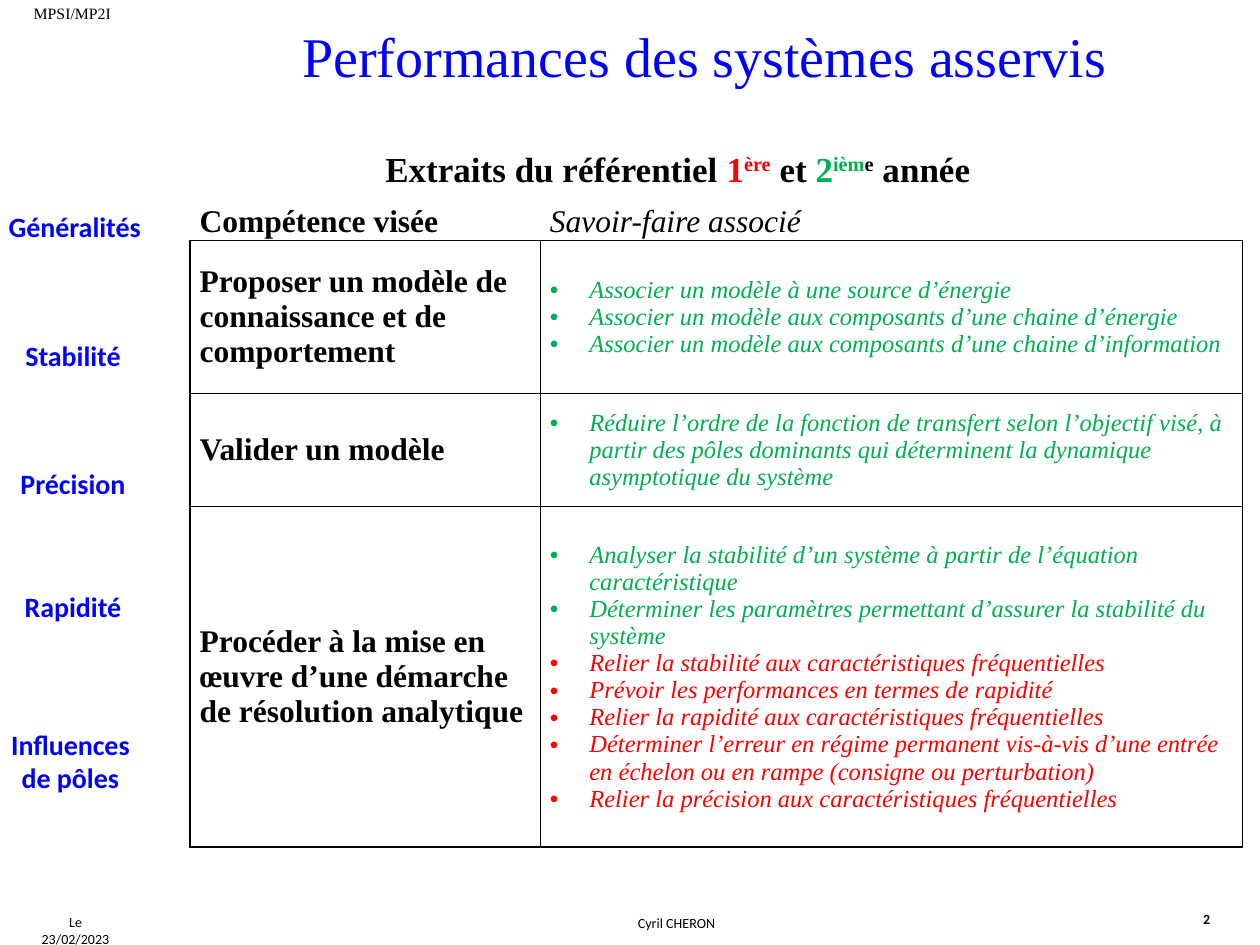
import pptx
import pptx.util
import pptx.dml.color
import pptx.enum.text
import pptx.oxml
import pptx.oxml.ns

Pt = pptx.util.Pt
RGBColor = pptx.dml.color.RGBColor
ALIGN = pptx.enum.text.PP_ALIGN
ANCHOR = pptx.enum.text.MSO_ANCHOR

BLACK = RGBColor(0x00, 0x00, 0x00)
WHITE = RGBColor(0xFF, 0xFF, 0xFF)
BLUE = RGBColor(0x00, 0x00, 0xFF)
RED = RGBColor(0xFF, 0x00, 0x00)
GREEN = RGBColor(0x00, 0xB0, 0x50)
SERIF = "Times New Roman"
SANS = "Calibri"

LABELS = [
    ("Généralités", 1, 116, 26.5),
    ("Stabilité", 0, 190, 26.5),
    ("Précision", 0, 263, 26.5),
    ("Rapidité", 0, 333.5, 26.5),
    ("Influences de pôles", -1.5, 412, 46),
]
HEADING = [
    ("Extraits du référentiel ", BLACK, False),
    ("1", RED, False),
    ("ère", RED, True),
    (" et ", BLACK, False),
    ("2", GREEN, False),
    ("ièm", GREEN, True),
    ("e", BLACK, True),
    (" année", BLACK, False),
]
SKILLS = [
    ("Proposer un modèle de connaissance et de comportement", 87.2, [
        ("Associer un modèle à une source d’énergie", GREEN),
        ("Associer un modèle aux composants d’une chaine d’énergie", GREEN),
        ("Associer un modèle aux composants d’une chaine d’information", GREEN),
    ]),
    ("Valider un modèle", 64.8, [
        ("Réduire l’ordre de la fonction de transfert selon l’objectif visé, à partir des pôles "
         "dominants qui déterminent la dynamique asymptotique du système", GREEN),
    ]),
    ("Procéder à la mise en œuvre d’une démarche de résolution analytique", 194.6, [
        ("Analyser la stabilité d’un système à partir de l’équation caractéristique", GREEN),
        ("Déterminer les paramètres permettant d’assurer la stabilité du système", GREEN),
        ("Relier la stabilité aux caractéristiques fréquentielles", RED),
        ("Prévoir les performances en termes de rapidité", RED),
        ("Relier la rapidité aux caractéristiques fréquentielles", RED),
        ("Déterminer l’erreur en régime permanent vis-à-vis d’une entrée en échelon ou en rampe "
         "(consigne ou perturbation)", RED),
        ("Relier la précision aux caractéristiques fréquentielles", RED),
    ]),
]


def write(p, text, size=18, font=SERIF, color=BLACK, bold=False, italic=False, raised=False):
    r = p.add_run()
    r.text = text
    r.font.size = Pt(size)
    r.font.name = font
    r.font.color.rgb = color
    r.font.bold = bold
    r.font.italic = italic
    if raised:
        r.font._element.set("baseline", "30000")


def place(sp, x, y, w, h):
    sp.left, sp.top, sp.width, sp.height = Pt(x), Pt(y), Pt(w), Pt(h)


def add_box(s, x, y, w, h, align=ALIGN.LEFT, wrap=True, side=7.2):
    tf = s.shapes.add_textbox(Pt(x), Pt(y), Pt(w), Pt(h)).text_frame
    tf.word_wrap = wrap
    tf.margin_left = tf.margin_right = Pt(side)
    tf.paragraphs[0].alignment = align
    return tf.paragraphs[0]


def add_title(s):
    sp = s.shapes.title
    place(sp, 156, 8.6, 493.5, 46)
    tf = sp.text_frame
    tf.word_wrap = False
    tf.auto_size = pptx.enum.text.MSO_AUTO_SIZE.NONE
    tf.vertical_anchor = ANCHOR.TOP
    p = tf.paragraphs[0]
    p.alignment = ALIGN.CENTER
    write(p, "Performances des systèmes asservis", size=32, color=BLUE)


def set_bullet(p):
    pPr = p._p.get_or_add_pPr()
    pPr.set("marL", str(Pt(22.5)))
    pPr.set("indent", str(Pt(-22.5)))
    ns = pptx.oxml.ns.nsdecls("a")
    pPr.append(pptx.oxml.parse_xml(f'<a:buFont {ns} typeface="Arial"/>'))
    pPr.append(pptx.oxml.parse_xml(f'<a:buChar {ns} char="•"/>'))


def set_borders(cell, **colors):
    ns = pptx.oxml.ns.nsdecls("a")
    tcPr = cell._tc.get_or_add_tcPr()
    for i, side in enumerate("LRTB"):
        color = colors.get(side, BLACK)
        tcPr.insert(i, pptx.oxml.parse_xml(
            f'<a:ln{side} {ns} w="{Pt(1)}"><a:solidFill><a:srgbClr val="{color}"/>'
            f'</a:solidFill></a:ln{side}>'))


def format_cell(cell, **borders):
    cell.fill.background()
    cell.vertical_anchor = ANCHOR.MIDDLE
    cell.margin_left = cell.margin_right = Pt(5.4)
    cell.margin_top = cell.margin_bottom = 0
    set_borders(cell, **borders)


def add_skill_table(s):
    heights = [21.6] + [height for _, height, _ in SKILLS]
    frame = s.shapes.add_table(len(heights), 2, Pt(108.7), Pt(115.9), Pt(601.2), Pt(sum(heights)))
    table = frame.table
    table.first_row = table.horz_banding = False
    for column, width in zip(table.columns, (200.2, 401)):
        column.width = Pt(width)
    for row, height in zip(table.rows, heights):
        row.height = Pt(height)
    headers = [("Compétence visée", {"bold": True}), ("Savoir-faire associé", {"italic": True})]
    for col, (text, style) in enumerate(headers):
        cell = table.cell(0, col)
        format_cell(cell, L=WHITE, T=WHITE, R=WHITE)
        write(cell.text_frame.paragraphs[0], text, **style)
    for row, (skill, _, abilities) in enumerate(SKILLS, 1):
        left, right = table.cell(row, 0), table.cell(row, 1)
        format_cell(left)
        format_cell(right)
        write(left.text_frame.paragraphs[0], skill, bold=True)
        tf = right.text_frame
        for i, (text, color) in enumerate(abilities):
            p = tf.add_paragraph() if i else tf.paragraphs[0]
            set_bullet(p)
            write(p, text, size=14, color=color, italic=True)


def main():
    prs = pptx.Presentation()
    prs.slide_width, prs.slide_height = Pt(720), Pt(540)
    s = prs.slides.add_slide(prs.slide_layouts[5])
    add_title(s)
    write(add_box(s, 12.2, -1.4, 62, 18), "MPSI/MP2I", size=9)
    write(add_box(s, 12.2, 518.4, 62, 17, align=ALIGN.CENTER, wrap=False),
          "Le 23/02/2023", size=8, font=SANS)
    write(add_box(s, 90, 519, 593.3, 17, align=ALIGN.CENTER), "Cyril CHERON", size=8, font=SANS)
    write(add_box(s, 680.4, 517, 28, 17, wrap=False), "2", size=8, font=SANS, bold=True)
    for text, x, y, h in LABELS:
        p = add_box(s, x, y, 83.5, h, align=ALIGN.CENTER, side=2.9)
        write(p, text, size=16, font=SANS, color=BLUE, bold=True)
    p = add_box(s, 206.6, 80.6, 361.4, 31.7, align=ALIGN.CENTER, wrap=False)
    for text, color, raised in HEADING:
        write(p, text, size=20, color=color, bold=True, raised=raised)
    add_skill_table(s)
    prs.save("out.pptx")


if __name__ == "__main__":
    main()
